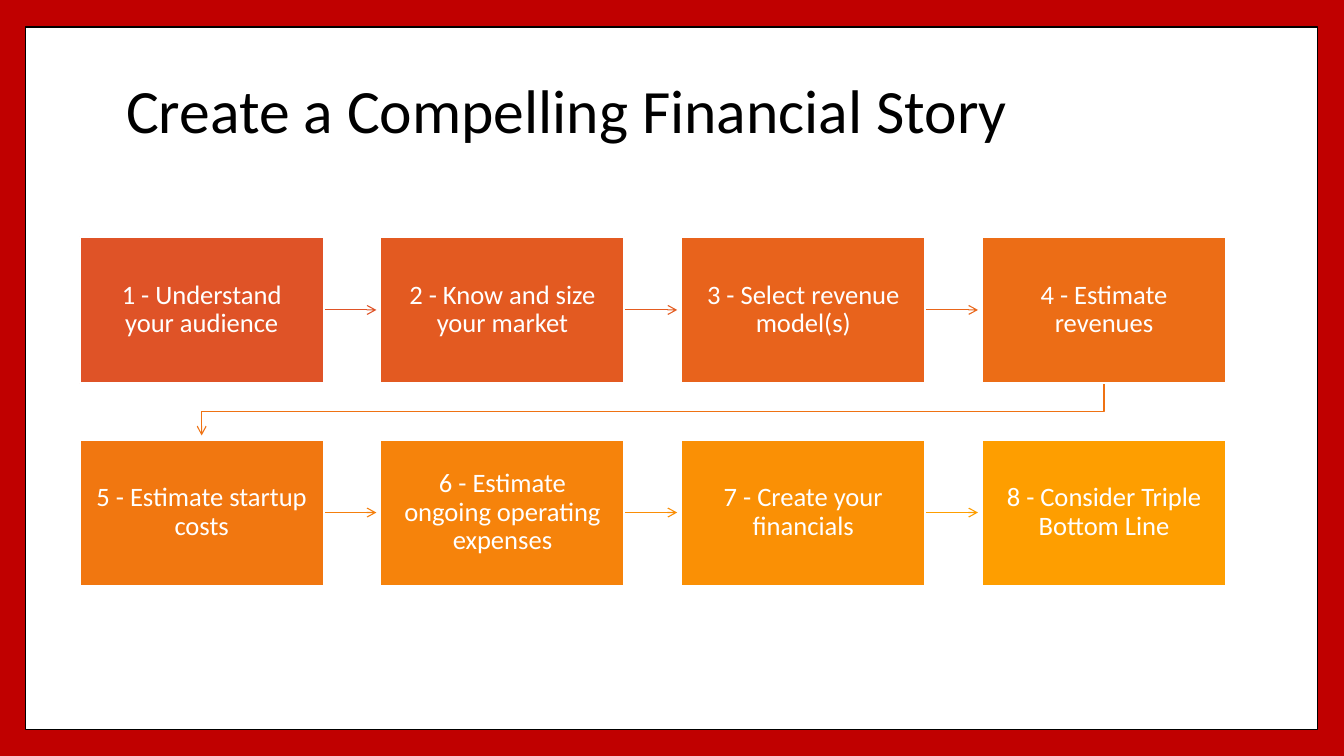
from lxml.etree import SubElement
from pptx import Presentation
from pptx.dml.color import RGBColor
from pptx.enum.shapes import MSO_CONNECTOR, MSO_SHAPE
from pptx.enum.text import MSO_ANCHOR, MSO_AUTO_SIZE, PP_ALIGN
from pptx.oxml.ns import qn
from pptx.util import Inches, Pt

COLORS = {"border": "C00000", "panel": "FFFFFF", "ink": "000000", "label": "FFFFFF"}
STEPS = [
    ("1 - Understand your audience", "DF5327", "DF5327"),
    ("2 - Know and size your market", "E35A21", "E45C20"),
    ("3 - Select revenue model(s)", "E8631C", "E9661A"),
    ("4 - Estimate revenues", "EC6D16", "EF7213"),
    ("5 - Estimate startup costs", "F17710", "F47F0D"),
    ("6 - Estimate ongoing operating expenses", "F6830B", "FA8E06"),
    ("7 - Create your financials", "FA9005", "FE9E00"),
    ("8 - Consider Triple Bottom Line", "FE9E00", None),
]
COLUMNS = 4
LEFT, LAST_LEFT, TOP = 0.79, 9.74, 2.35
STEP_W, STEP_H = 2.42, 1.45
PITCH_X, PITCH_Y = (LAST_LEFT - LEFT) / (COLUMNS - 1), 2.01
ARROW_GAP = 0.04


class StorySlide:
    """Draws the elements of the slide in one shared style."""

    def __init__(self, slide):
        self.slide = slide
        self.shapes = slide.shapes
        self.font = "Calibri"

    def rgb(self, color):
        return RGBColor.from_string(COLORS.get(color, color))

    def set_text(self, frame, text, size, color, align, margins):
        frame.text = text
        frame.word_wrap = True
        frame.auto_size = MSO_AUTO_SIZE.NONE
        frame.vertical_anchor = MSO_ANCHOR.MIDDLE
        frame.margin_left = frame.margin_right = Inches(margins[0])
        frame.margin_top = frame.margin_bottom = Inches(margins[1])
        paragraph = frame.paragraphs[0]
        paragraph.alignment = align
        paragraph.line_spacing = 0.9
        font = paragraph.runs[0].font
        font.name, font.size = self.font, Pt(size)
        font.color.rgb = self.rgb(color)

    def rectangle(self, left, top, width, height, fill, line, line_width):
        box = self.shapes.add_shape(
            MSO_SHAPE.RECTANGLE, Inches(left), Inches(top), Inches(width), Inches(height))
        box.shadow.inherit = False
        box.fill.solid()
        box.fill.fore_color.rgb = self.rgb(fill)
        box.line.color.rgb = self.rgb(line)
        box.line.width = Pt(line_width)
        return box

    def backdrop(self):
        self.slide.background.fill.solid()
        self.slide.background.fill.fore_color.rgb = self.rgb("border")
        panel = self.rectangle(0.25, 0.27, 12.82, 6.97, "panel", "ink", 1)
        self.shapes.title.element.addprevious(panel.element)

    def title(self, text):
        heading = self.shapes.title
        heading.left, heading.top = Inches(1.15), Inches(0.5)
        heading.width, heading.height = Inches(10.65), Inches(1.25)
        self.set_text(heading.text_frame, text, 44, "ink", PP_ALIGN.LEFT, (0.1, 0.05))

    def step(self, text, left, top, fill):
        box = self.rectangle(left, top, STEP_W, STEP_H, fill, "panel", 1.5)
        self.set_text(box.text_frame, text, 19, "label", PP_ALIGN.CENTER, (0.15, 0.15))
        return box

    def arrow_style(self, arrow, color):
        arrow.line.color.rgb = self.rgb(color)
        arrow.line.width = Pt(0.79)
        outline = arrow.element.spPr.find(qn("a:ln"))
        SubElement(outline, qn("a:tailEnd"), type="arrow")

    def arrow_right(self, left, top, color):
        middle = Inches(top + STEP_H / 2)
        arrow = self.shapes.add_connector(
            MSO_CONNECTOR.STRAIGHT, Inches(left + STEP_W), middle,
            Inches(left + PITCH_X - ARROW_GAP), middle)
        self.arrow_style(arrow, color)
        SubElement(arrow.element.spPr, qn("a:effectLst"))
        return arrow

    def arrow_to_next_row(self, left, top, color):
        start_x, end_x = left + STEP_W / 2, LEFT + STEP_W / 2
        start_y, end_y = top + STEP_H, top + PITCH_Y - ARROW_GAP
        bend_y = (start_y + top + PITCH_Y) / 2
        builder = self.shapes.build_freeform(Inches(start_x), Inches(start_y))
        builder.add_line_segments(
            [(Inches(x), Inches(y))
             for x, y in ((start_x, bend_y), (end_x, bend_y), (end_x, end_y))],
            close=False)
        arrow = builder.convert_to_shape()
        arrow.shadow.inherit = False
        arrow.fill.background()
        self.arrow_style(arrow, color)

    def process(self, steps):
        for index, (text, fill, arrow_color) in enumerate(steps):
            row, column = divmod(index, COLUMNS)
            left, top = LEFT + column * PITCH_X, TOP + row * PITCH_Y
            arrow = None
            if arrow_color and column < COLUMNS - 1:
                arrow = self.arrow_right(left, top, arrow_color)
            elif arrow_color:
                self.arrow_to_next_row(left, top, arrow_color)
            box = self.step(text, left, top, fill)
            if arrow:
                arrow.begin_connect(box, 3)


def main():
    deck = Presentation()
    deck.slide_width, deck.slide_height = Inches(13.33), Inches(7.5)
    story = StorySlide(deck.slides.add_slide(deck.slide_layouts[5]))
    story.backdrop()
    story.title("Create a Compelling Financial Story")
    story.process(STEPS)
    deck.save("out.pptx")


if __name__ == "__main__":
    main()
